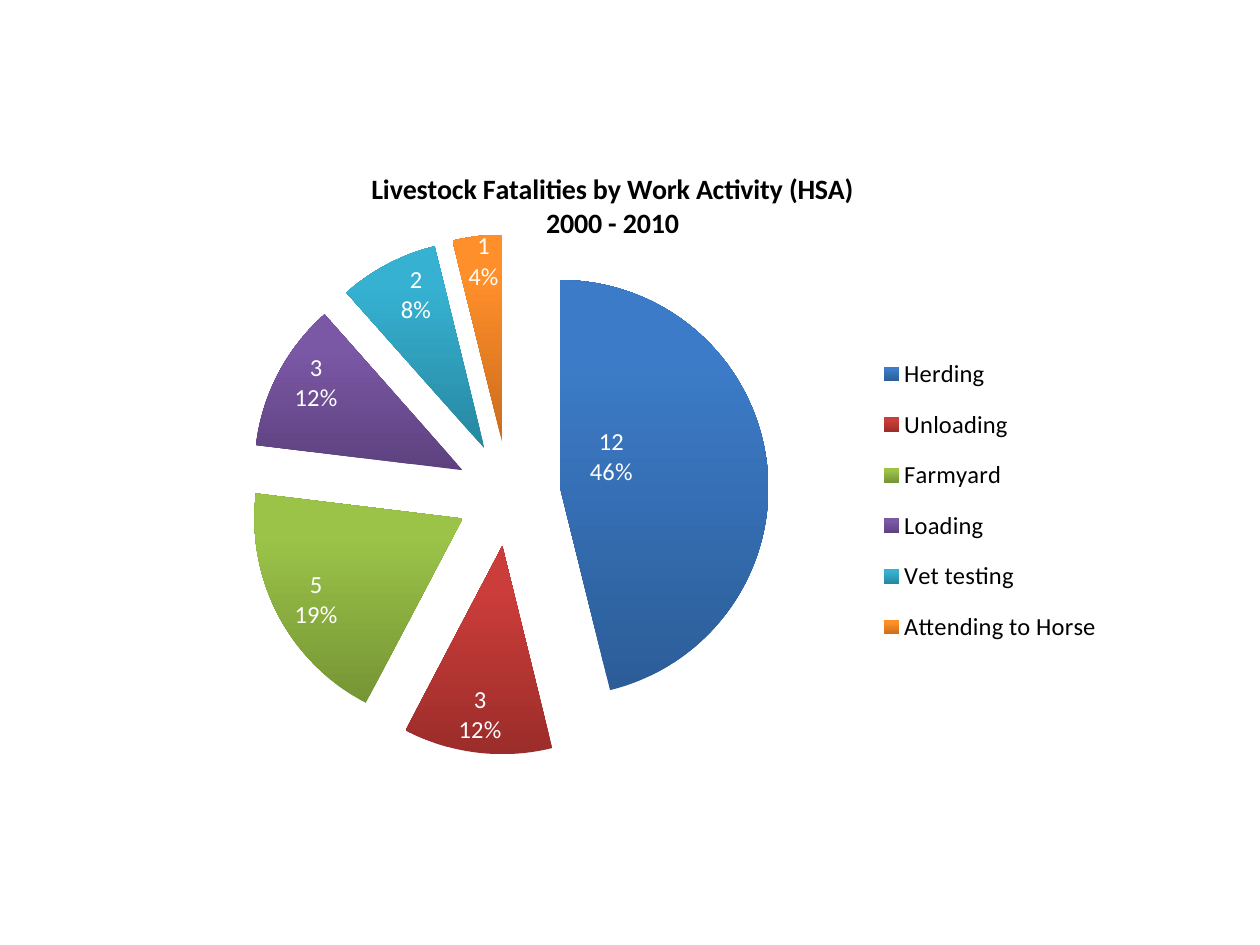
from lxml.etree import SubElement
from pptx import Presentation
from pptx.chart.data import CategoryChartData
from pptx.dml.color import RGBColor
from pptx.enum.chart import XL_CHART_TYPE, XL_LABEL_POSITION, XL_LEGEND_POSITION
from pptx.oxml import parse_xml
from pptx.oxml.ns import nsdecls, qn
from pptx.util import Cm, Pt

FONT = "Calibri"
COLORS = {"text": "000000", "label": "FFFFFF"}
SLICE_COLORS = {
    "Herding": ("2C5D98", "3C7BC7"),
    "Unloading": ("9B2D2A", "CB3D3A"),
    "Farmyard": ("769535", "9BC348"),
    "Loading": ("5D417E", "7B58A6"),
    "Vet testing": ("2787A0", "36B1D2"),
    "Attending to Horse": ("CB6C1D", "FF8F2A"),
}
FATALITIES = (12, 3, 5, 3, 2, 1)
TITLE_LINES = ("Livestock Fatalities by Work Activity (HSA)", "2000 - 2010")
LABEL_OFFSETS = ((-0.13, -0.06), (-0.02, 0), (0.01, 0.03),
                 (0.01, -0.04), (0.01, -0.01), (-0.01, -0.02))


def style_font(font, size, color, bold=False):
    """Set typeface, size, colour and weight."""
    font.name, font.size, font.bold = FONT, Pt(size), bold
    font.color.rgb = RGBColor.from_string(COLORS[color])


def set_layout(parent, index, **values):
    """Give a chart part a manual layout at its place in the schema order."""
    for old_layout in parent.findall(qn("c:layout")):
        parent.remove(old_layout)
    layout = parse_xml(f"<c:layout {nsdecls('c')}><c:manualLayout/></c:layout>")
    for tag, value in values.items():
        SubElement(layout[0], qn(f"c:{tag}")).set("val", str(value))
    parent.insert(index, layout)


def add_title(chart):
    """Write the two-line chart title."""
    title = chart.chart_title
    frame = title.text_frame
    for number, line in enumerate(TITLE_LINES):
        paragraph = frame.add_paragraph() if number else frame.paragraphs[0]
        run = paragraph.add_run()
        run.text = line
        style_font(run.font, 16, "text", bold=True)
    set_layout(title._element, 1, xMode="edge", yMode="edge", x=0.23, y=0.02)


def add_legend(chart):
    """Place the activity legend on the right."""
    chart.has_legend = True
    legend = chart.legend
    legend.position = XL_LEGEND_POSITION.RIGHT
    legend.include_in_layout = False
    style_font(legend.font, 14, "text")
    set_layout(legend._element, 1, xMode="edge", yMode="edge",
               x=0.75, y=0.3, w=0.24, h=0.53)


def color_slices(series):
    """Shade each slice from dark at the bottom to light at the top."""
    for number, shades in enumerate(SLICE_COLORS.values()):
        fill = series.points[number].format.fill
        fill.gradient()
        fill.gradient_angle = 90
        for stop, shade, position in zip(fill.gradient_stops, shades, (0, 0.8)):
            stop.color.rgb = RGBColor.from_string(shade)
            stop.position = position


def split_lines(labels):
    """Put the value and the percentage on separate lines."""
    labels.find(qn("c:showPercent")).set("val", "1")
    separator = parse_xml(f"<c:separator {nsdecls('c')}>\n</c:separator>")
    labels.find(qn("c:showBubbleSize")).addnext(separator)


def add_labels(series):
    """Show count and percentage, each label set well inside its slice."""
    labels = series.data_labels
    labels.show_value = True
    labels.position = XL_LABEL_POSITION.INSIDE_END
    style_font(labels.font, 14, "label")
    split_lines(labels._element)
    for number in range(len(FATALITIES)):
        label = series.points[number].data_label
        style_font(label.font, 14, "label")
        label.position = XL_LABEL_POSITION.INSIDE_END
    slice_labels = labels._element.findall(qn("c:dLbl"))
    for label, (x, y) in zip(slice_labels, LABEL_OFFSETS):
        split_lines(label)
        set_layout(label, 1, x=x, y=y)


def add_fatalities_pie(slide):
    """Add the exploded pie of fatalities by activity."""
    data = CategoryChartData()
    data.categories = list(SLICE_COLORS)
    data.add_series("Series 1", FATALITIES)
    chart = slide.shapes.add_chart(XL_CHART_TYPE.PIE_EXPLODED, Cm(2.9), Cm(3.12),
                                   Cm(19.61), Cm(12.34), data).chart
    style_font(chart.font, 10, "text")
    add_title(chart)
    add_legend(chart)
    plot = chart.plots[0]
    plot.vary_by_categories = True
    color_slices(plot.series[0])
    add_labels(plot.series[0])
    set_layout(chart._chartSpace.chart.plotArea, 0, layoutTarget="inner",
               xMode="edge", yMode="edge", x=0, y=0.13, w=0.75, h=0.85)


def main():
    """Build and save the slide."""
    presentation = Presentation()
    presentation.slide_width, presentation.slide_height = Cm(25.4), Cm(19.05)
    slide = presentation.slides.add_slide(presentation.slide_layouts[6])
    add_fatalities_pie(slide)
    presentation.save("out.pptx")


if __name__ == "__main__":
    main()
